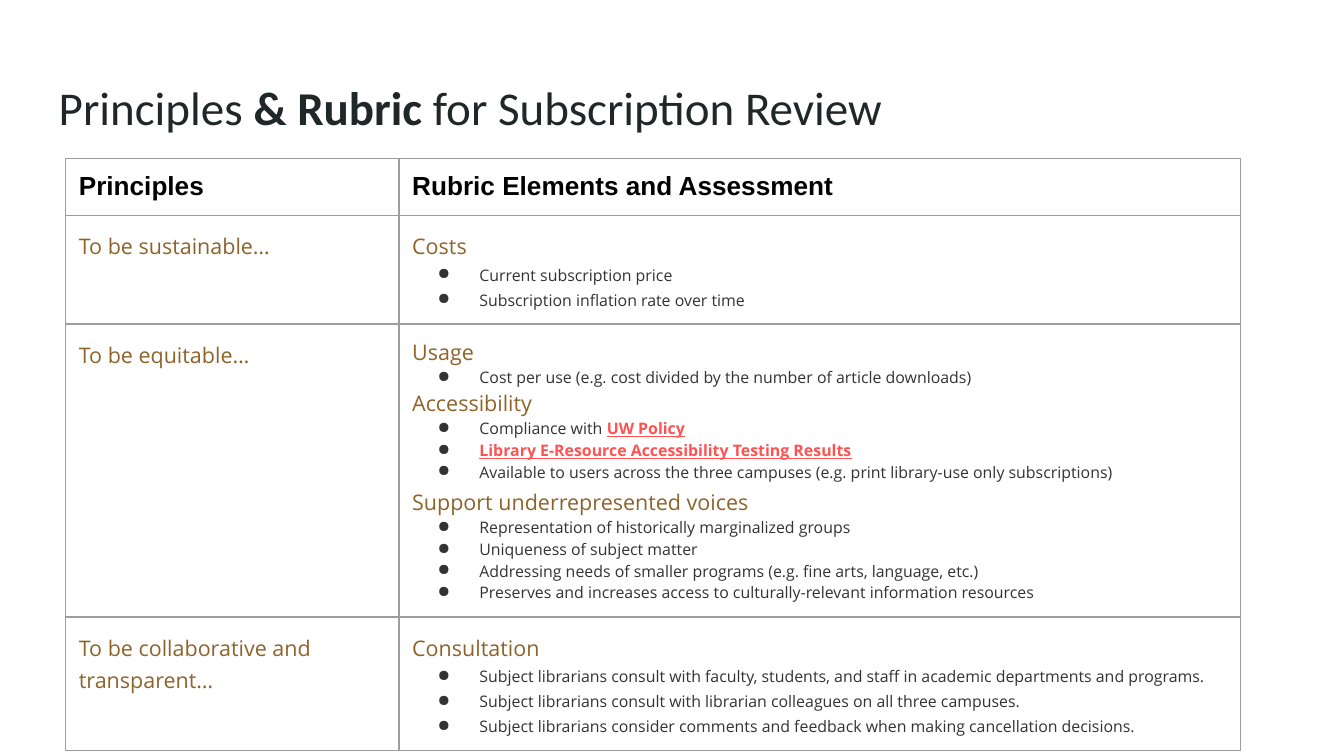
"""Build the slide that pairs subscription principles with their rubric elements."""
from dataclasses import dataclass

from lxml import etree
from pptx import Presentation
from pptx.dml.color import RGBColor
from pptx.enum import text
from pptx.oxml import ns
from pptx.util import Cm, Pt


@dataclass(frozen=True)
class Theme:
    """Fonts, colours, sizes and insets of the slide."""
    title_font: str = "Calibri"
    header_font: str = "Arial"
    body_font: str = "Open Sans"
    title_color: str = "202729"
    header_color: str = "000000"
    heading_color: str = "8E632A"
    item_color: str = "333333"
    link_color: str = "FF5252"
    border_color: str = "9E9E9E"
    title_size: float = 25.2
    header_size: float = 14
    heading_size: float = 11.5
    item_size: float = 8.5
    border_width: float = 0.75
    inset: float = 0.25


THEME = Theme()
TITLE = "Principles **& Rubric** for Subscription Review"
HEADERS = ("Principles", "Rubric Elements and Assessment")
COLUMN_WIDTHS = (6.3, 15.9)
ROW_HEIGHTS = (1.07, 1.8, 4.8, 2.31)
PRINCIPLE_SPACING = 1.1
RUBRIC = [
    ("To be sustainable…", 1.15, [
        ("Costs", 1.1, [
            "Current subscription price",
            "Subscription inflation rate over time"])]),
    ("To be equitable…", 1.0, [
        ("Usage", 1.0, [
            "Cost per use (e.g. cost divided by the number of article downloads)"]),
        ("Accessibility", 1.0, [
            "Compliance with **UW Policy**",
            "**Library E-Resource Accessibility Testing Results**",
            "Available to users across the three campuses "
            "(e.g. print library-use only subscriptions)"]),
        ("Support underrepresented voices", 1.15, [
            "Representation of historically marginalized groups",
            "Uniqueness of subject matter",
            "Addressing needs of smaller programs (e.g. fine arts, language, etc.)",
            "Preserves and increases access to culturally-relevant information resources"])]),
    ("To be collaborative and transparent…", 1.15, [
        ("Consultation", 1.1, [
            "Subject librarians consult with faculty, students, and staff "
            "in academic departments and programs.",
            "Subject librarians consult with librarian colleagues on all three campuses.",
            "Subject librarians consider comments and feedback "
            "when making cancellation decisions."])]),
]


def add_xml(parent, tag, **attributes):
    """Append a DrawingML element to the parent and return it."""
    return etree.SubElement(parent, ns.qn(tag), attributes)


def set_insets(holder):
    """Give a cell or text frame the theme's margin on every side."""
    for side in ("left", "right", "top", "bottom"):
        setattr(holder, f"margin_{side}", Cm(THEME.inset))


def write(paragraph, wording, font, size, color, bold=False, spacing=1.0, link_color=None):
    """Fill a paragraph, with bold or link styling between double asterisks."""
    paragraph.alignment = text.PP_ALIGN.LEFT
    paragraph.line_spacing = spacing
    for index, part in enumerate(wording.split("**")):
        if not part:
            continue
        marked = index % 2 == 1
        is_link = marked and link_color is not None
        run = paragraph.add_run()
        run.text = part
        run.font.name = font
        run.font.size = Pt(size)
        run.font.bold = bold or marked
        run.font.underline = is_link
        run.font.color.rgb = RGBColor.from_string(link_color if is_link else color)


def write_heading(paragraph, wording, spacing):
    """Write a principle or the name of a rubric group."""
    write(paragraph, wording, THEME.body_font, THEME.heading_size,
          THEME.heading_color, spacing=spacing)


def write_item(paragraph, wording, spacing):
    """Write one bulleted rubric element."""
    properties = paragraph._p.get_or_add_pPr()
    properties.set("marL", str(Cm(1.27)))
    properties.set("indent", str(Cm(-0.79)))
    add_xml(add_xml(properties, "a:buClr"), "a:srgbClr", val=THEME.item_color)
    add_xml(properties, "a:buChar", char="●")
    write(paragraph, wording, THEME.body_font, THEME.item_size, THEME.item_color,
          spacing=spacing, link_color=THEME.link_color)


def format_cell(cell):
    """Give a cell its borders, insets and clear fill."""
    set_insets(cell)
    cell.vertical_anchor = text.MSO_ANCHOR.TOP
    properties = cell._tc.get_or_add_tcPr()
    for tag in ("a:lnL", "a:lnR", "a:lnT", "a:lnB"):
        border = add_xml(properties, tag, w=str(Pt(THEME.border_width)))
        add_xml(add_xml(border, "a:solidFill"), "a:srgbClr", val=THEME.border_color)
    cell.fill.background()


def fill_rubric(frame, groups, item_spacing):
    """Write the rubric groups and their elements into one cell."""
    paragraph = frame.paragraphs[0]
    for position, (heading, heading_spacing, items) in enumerate(groups):
        if position:
            paragraph = frame.add_paragraph()
        write_heading(paragraph, heading, heading_spacing)
        for item in items:
            write_item(frame.add_paragraph(), item, item_spacing)


def place_title(slide, left, top, width, height):
    """Place the title placeholder in the given box."""
    title = slide.shapes.title
    title.left, title.top, title.width, title.height = left, top, width, height
    frame = title.text_frame
    frame.word_wrap = True
    frame.auto_size = text.MSO_AUTO_SIZE.NONE
    frame.vertical_anchor = text.MSO_ANCHOR.TOP
    set_insets(frame)
    write(frame.paragraphs[0], TITLE, THEME.title_font, THEME.title_size, THEME.title_color)


def place_rubric(slide, left, top, width, height):
    """Place the rubric table, sharing the box out among columns and rows."""
    table = slide.shapes.add_table(
        len(RUBRIC) + 1, len(HEADERS), left, top, width, height).table
    table.first_row = table.horz_banding = False
    for column, share in zip(table.columns, COLUMN_WIDTHS):
        column.width = int(width * share / sum(COLUMN_WIDTHS))
    for row, share in zip(table.rows, ROW_HEIGHTS):
        row.height = int(height * share / sum(ROW_HEIGHTS))
    for cell in table.iter_cells():
        format_cell(cell)
    for index, header in enumerate(HEADERS):
        write(table.cell(0, index).text_frame.paragraphs[0], header, THEME.header_font,
              THEME.header_size, THEME.header_color, bold=True)
    for index, (principle, item_spacing, groups) in enumerate(RUBRIC, start=1):
        write_heading(table.cell(index, 0).text_frame.paragraphs[0],
                      principle, PRINCIPLE_SPACING)
        fill_rubric(table.cell(index, 1).text_frame, groups, item_spacing)


def main():
    """Build and save the presentation."""
    deck = Presentation()
    deck.slide_width, deck.slide_height = Cm(25.4), Cm(14.29)
    slide = deck.slides.add_slide(deck.slide_layouts[5])
    place_title(slide, Cm(0.86), Cm(1.24), Cm(23.67), Cm(1.6))
    place_rubric(slide, Cm(1.24), Cm(3), Cm(sum(COLUMN_WIDTHS)), Cm(sum(ROW_HEIGHTS)))
    deck.save("out.pptx")


if __name__ == "__main__":
    main()
